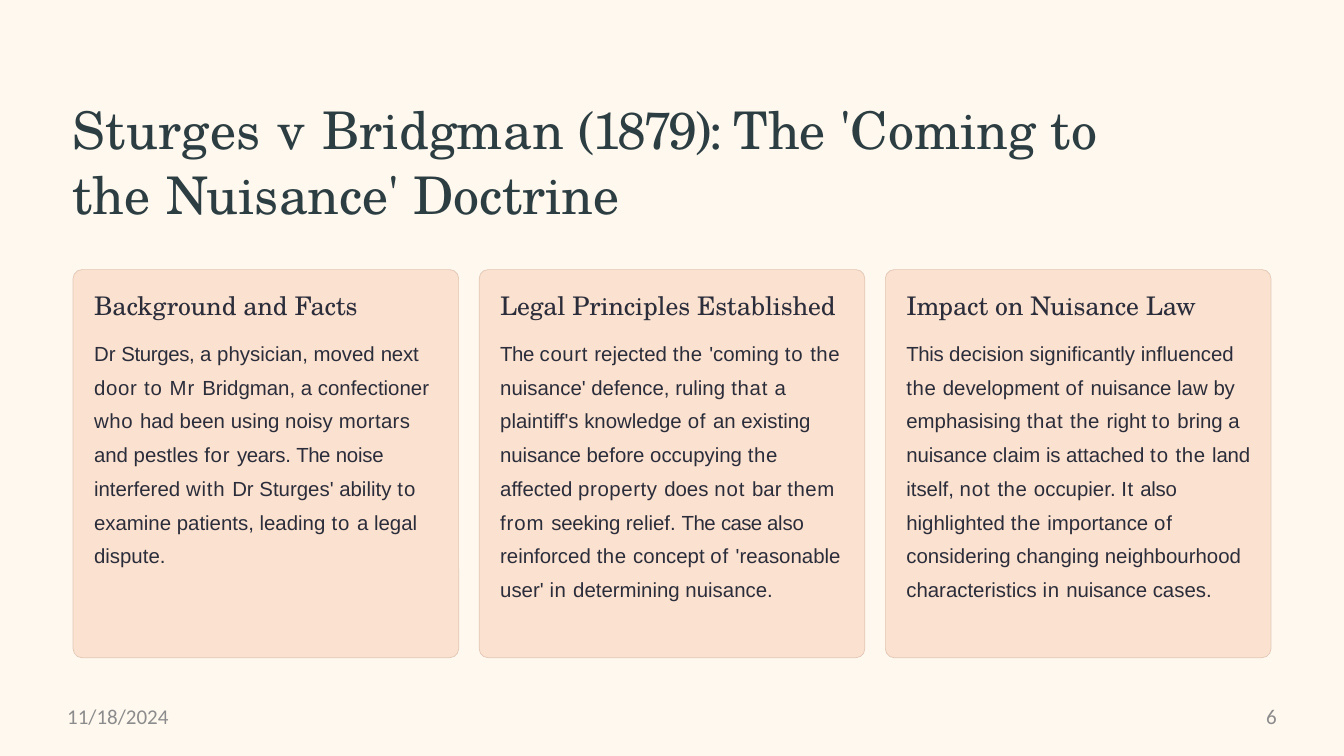
from dataclasses import dataclass
from itertools import groupby

from pptx import Presentation
from pptx.dml.color import RGBColor as Rgb
from pptx.enum.shapes import MSO_SHAPE as Shape
from pptx.enum.text import PP_ALIGN as Align
from pptx.util import Inches, Pt

HUES = {"page": "FFF8EF", "title": "2C3E42", "text": "2B2D3B",
        "card": "FBE1CF", "edge": "E1C7B5", "foot": "8C8C8C"}
SERIF, SANS, SMALL = "TeX Gyre Schola", "Arial", "Calibri"

# Letter spacing in points for the words that need it
TITLE_GAPS = {"Sturges": 0.6, "v": 1.3, "(1879):": -2.9, "The": -0.1,
              "the": 0.5, "Doctrine": -0.1}
BODY_GAPS = {"to": 0.8, "the": 0.5, "of": 0.7, "not": 0.8, "for": 0.7,
             "with": 0.7, "that": 0.6, "in": 0.6, "from": 0.8, "them": 0.5,
             "door": 0.6, "Mr": 0.9, "who": 0.6, "mortars": 0.3,
             "court": 0.5, "property": 0.5, "It": 0.5, "The": -0.4,
             "This": -0.3, "case": -0.6, "also": -0.2, "Sturges,": -0.3,
             "years.": -0.3, "noise": -0.2, "next": -0.2, "is": -0.2,
             "land": -0.2, "by": -0.2, "seeking": -0.2, "nuisance": -0.1}


@dataclass
class Style:
    font: str
    size: float
    hue: str
    gaps: dict[str, float]
    base: float = 0


@dataclass
class Card:
    head: str
    body: str


TITLE = Style(SERIF, 44.5, "title", TITLE_GAPS)
HEAD = Style(SERIF, 22, "text", {}, -0.1)
BODY = Style(SANS, 17.5, "text", BODY_GAPS)
FOOT = Style(SMALL, 18, "foot", {})

CARDS = [
    Card("Background and Facts",
         "Dr Sturges, a physician, moved next door to Mr Bridgman, a "
         "confectioner who had been using noisy mortars and pestles for "
         "years. The noise interfered with Dr Sturges' ability to examine "
         "patients, leading to a legal dispute."),
    Card("Legal Principles Established",
         "The court rejected the 'coming to the nuisance' defence, ruling "
         "that a plaintiff's knowledge of an existing nuisance before "
         "occupying the affected property does not bar them from seeking "
         "relief. The case also reinforced the concept of 'reasonable user' "
         "in determining nuisance."),
    Card("Impact on Nuisance Law",
         "This decision significantly influenced the development of nuisance "
         "law by emphasising that the right to bring a nuisance claim is "
         "attached to the land itself, not the occupier. It also highlighted "
         "the importance of considering changing neighbourhood "
         "characteristics in nuisance cases."),
]


def color(name: str) -> Rgb:
    return Rgb.from_string(HUES[name])


def add_box(slide, left: float, top: float, width: float, height: float):
    box = slide.shapes.add_textbox(*map(Inches, (left, top, width, height)))
    frame = box.text_frame
    frame.word_wrap = True
    frame.margin_left = frame.margin_right = 0
    frame.margin_top = frame.margin_bottom = 0
    return frame


def write(para, text: str, style: Style) -> None:
    """Fill a paragraph, with one run for each stretch of equal spacing."""
    para.font.name = style.font
    para.font.size = Pt(style.size)
    para.font.color.rgb = color(style.hue)
    words = text.split(" ")
    for gap, group in groupby(words, lambda w: style.gaps.get(w, style.base)):
        run = para.add_run()
        run.text = " ".join(group) + " "
        if gap:
            run.font._element.set("spc", str(round(gap * 100)))
    para.runs[-1].text = para.runs[-1].text.rstrip()


def add_card(slide, card: Card, left: float) -> None:
    width, top = 4.59, 3.21
    panel = slide.shapes.add_shape(
        Shape.ROUNDED_RECTANGLE, *map(Inches, (left, top, width, 4.62)))
    panel.adjustments[0] = 0.023
    panel.shadow.inherit = False
    panel.fill.solid()
    panel.fill.fore_color.rgb = color("card")
    panel.line.color.rgb = color("edge")
    panel.line.width = Pt(0.6)

    frame = add_box(slide, left + 0.25, top + 0.24, 4.13, 3.75)
    head, body = frame.paragraphs[0], frame.add_paragraph()
    head.space_before = Pt(0.9)
    write(head, card.head, HEAD)
    body.space_before = Pt(9.4)
    body.line_spacing = 1.38
    write(body, card.body, BODY)


def main() -> None:
    deck = Presentation()
    deck.slide_width, deck.slide_height = Inches(16), Inches(9)
    slide = deck.slides.add_slide(deck.slide_layouts[6])
    slide.background.fill.solid()
    slide.background.fill.fore_color.rgb = color("page")

    # Title
    para = add_box(slide, 0.86, 1.12, 12.34, 1.55).paragraphs[0]
    para.line_spacing = Pt(56)
    write(para, "Sturges v Bridgman (1879): The 'Coming to "
                "the Nuisance' Doctrine", TITLE)

    # Cards
    for i, card in enumerate(CARDS):
        add_card(slide, card, 0.87 + i * 4.835)

    # Footer
    for left, text, align in ((0.8, "11/18/2024", Align.LEFT),
                              (11.52, "6", Align.RIGHT)):
        para = add_box(slide, left, 8.37, 3.68, 0.45).paragraphs[0]
        para.alignment = align
        write(para, text, FOOT)

    deck.save("out.pptx")


if __name__ == "__main__":
    main()
